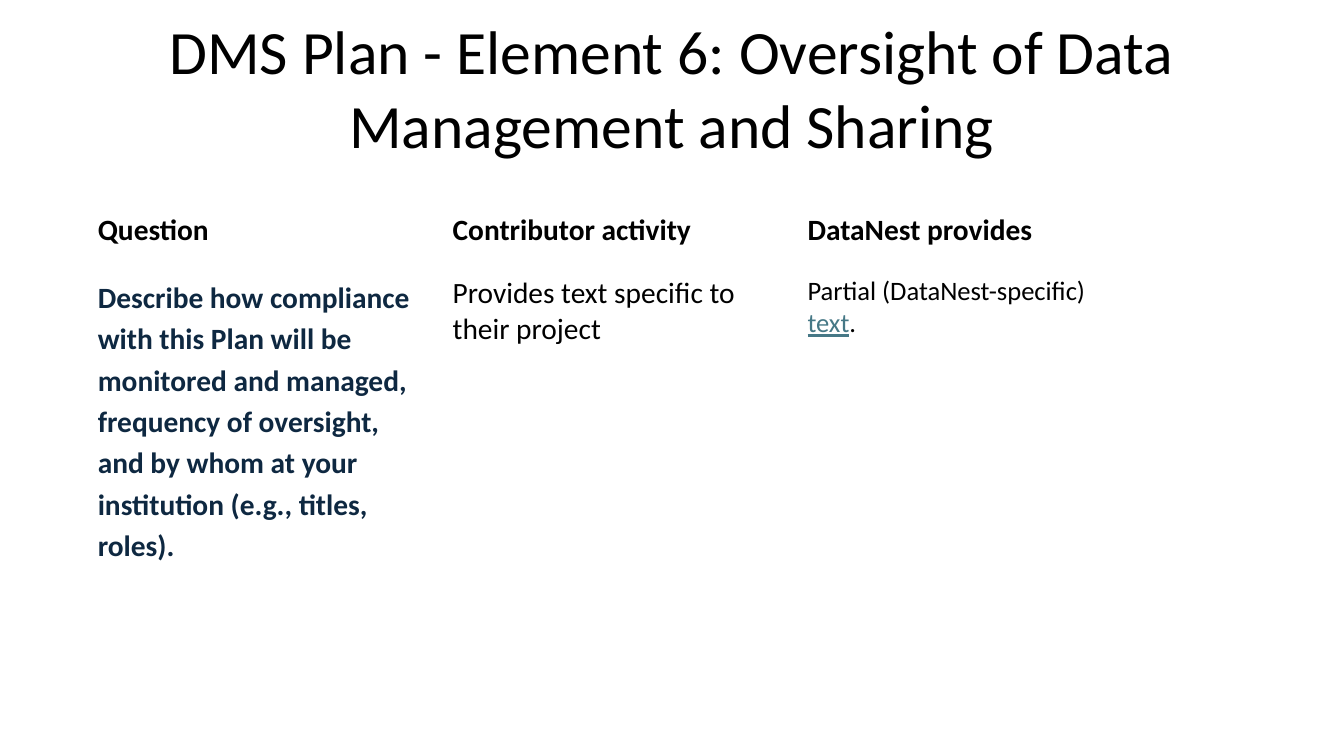
from pptx import Presentation
from pptx.dml.color import RGBColor
from pptx.enum.text import MSO_ANCHOR, PP_ALIGN
from pptx.util import Inches, Pt

BLACK = RGBColor(0x00, 0x00, 0x00)
NAVY = RGBColor(0x0E, 0x28, 0x41)
TEAL = RGBColor(0x46, 0x78, 0x86)
INSET = Inches(0.13)
MARGINS = dict.fromkeys(
    ("margin_left", "margin_top", "margin_right", "margin_bottom"), INSET)

HEADING = {"size": Pt(21), "bold": True}
BODY = {"size": Pt(21)}
SMALL = {"size": Pt(19)}

ROWS = [
    [
        [("Question", HEADING, BLACK)],
        [("Contributor activity", HEADING, BLACK)],
        [("DataNest provides", HEADING, BLACK)],
    ],
    [
        [("Describe how compliance with this Plan will be monitored and managed, "
          "frequency of oversight, and by whom at your institution "
          "(e.g., titles, roles).", HEADING, NAVY)],
        [("Provides text specific to their project", BODY, BLACK)],
        [("Partial (DataNest-specific) ", SMALL, BLACK),
         ("text", {**SMALL, "underline": True}, TEAL),
         (".", SMALL, BLACK)],
    ],
]


def set_all(target, values):
    for name, value in values.items():
        setattr(target, name, value)


def add_spans(para, spans):
    for text, style, color in spans:
        span = para.add_run()
        span.text = text
        set_all(span.font, {"name": "Calibri", "bold": False, **style})
        span.font.color.rgb = color


def add_title(page, left, top, width, height):
    box = page.shapes.add_textbox(left, top, width, height)
    frame = box.text_frame
    set_all(frame, {**MARGINS, "word_wrap": True, "vertical_anchor": MSO_ANCHOR.TOP})
    para = frame.paragraphs[0]
    para.alignment = PP_ALIGN.CENTER
    add_spans(para, [("DMS Plan - Element 6: Oversight of Data Management and Sharing",
                      {"size": Pt(44)}, BLACK)])


def add_plan_table(page, left, top, width, heights):
    table = page.shapes.add_table(
        len(ROWS), len(ROWS[0]), left, top, width, sum(heights)).table
    set_all(table, {"first_row": False, "horz_banding": False})
    for column in table.columns:
        column.width = width // len(ROWS[0])
    for row, height, contents in zip(table.rows, heights, ROWS):
        row.height = height
        for cell, spans in zip(row.cells, contents):
            set_all(cell, {**MARGINS, "vertical_anchor": MSO_ANCHOR.TOP})
            cell.fill.background()
            add_spans(cell.text_frame.paragraphs[0], spans)
    table.cell(1, 0).text_frame.paragraphs[0].line_spacing = 1.15


def main():
    deck = Presentation()
    set_all(deck, {"slide_width": Inches(13.33), "slide_height": Inches(7.5)})
    page = deck.slides.add_slide(deck.slide_layouts[6])
    add_title(page, 0, 0, deck.slide_width, Inches(0.84))
    add_plan_table(page, Inches(0.84), Inches(1.98), Inches(10.56),
                   [Inches(0.62), Inches(3.44)])
    deck.save("out.pptx")


if __name__ == "__main__":
    main()
